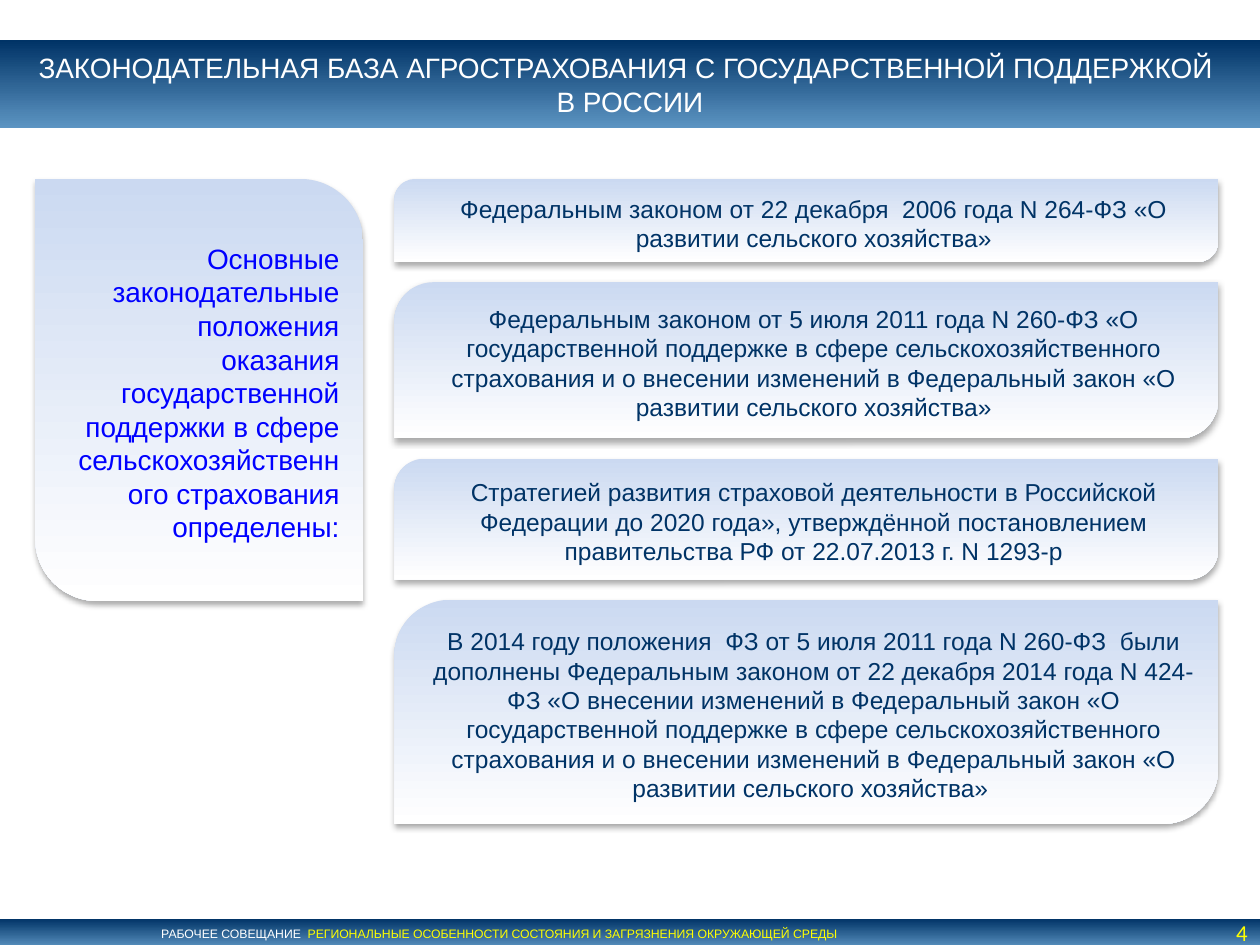
import pptx
import pptx.util
import pptx.dml.color
import pptx.enum.shapes
import pptx.enum.text
import pptx.oxml
import pptx.oxml.ns

Inches = pptx.util.Inches
PP_ALIGN = pptx.enum.text.PP_ALIGN
SHAPES = pptx.enum.shapes.MSO_SHAPE

NAVY, STEEL, PALE = "003366", "5D95C3", "CBD9F1"
WHITE, YELLOW, BLUE = "FFFFFF", "FFFF00", "0000FF"

TITLE = ["ЗАКОНОДАТЕЛЬНАЯ БАЗА АГРОСТРАХОВАНИЯ С ГОСУДАРСТВЕННОЙ ПОДДЕРЖКОЙ ", "В РОССИИ"]
INTRO = ("Основные законодательные положения оказания государственной поддержки "
         "в сфере сельскохозяйственного страхования определены:")
# Height and wording of each law card
LAWS = [
    (0.66, "Федеральным законом от 22 декабря  2006 года N 264-ФЗ «О развитии сельского хозяйства»"),
    (1.24, "Федеральным законом от 5 июля 2011 года N 260-ФЗ «О государственной поддержке в сфере "
           "сельскохозяйственного страхования и о внесении изменений в Федеральный закон "
           "«О развитии сельского хозяйства»"),
    (0.96, "Стратегией развития страховой деятельности в Российской Федерации до 2020 года», "
           "утверждённой постановлением правительства РФ от 22.07.2013 г. N 1293-р"),
    (1.78, "В 2014 году положения  ФЗ от 5 июля 2011 года N 260-ФЗ  были дополнены Федеральным "
           "законом от 22 декабря 2014 года N 424-ФЗ «О внесении изменений в Федеральный закон "
           "«О государственной поддержке в сфере сельскохозяйственного страхования и о внесении "
           "изменений в Федеральный закон «О развитии сельского хозяйства» "),
]


def rgb(value):
    return pptx.dml.color.RGBColor.from_string(value)


def set_gradient(shape, top, bottom):
    shape.fill.gradient()
    shape.fill.gradient_angle = 270
    for stop, color in zip(shape.fill.gradient_stops, (top, bottom)):
        stop.color.rgb = rgb(color)
    shape.line.fill.background()


def set_text(shape, paragraphs, align, size, insets, font="Arial"):
    """Each paragraph is a list of (text, colour) runs."""
    frame = shape.text_frame
    left, top, right, bottom = (Inches(inset) for inset in insets)
    frame_format = {
        "word_wrap": True,
        "auto_size": pptx.enum.text.MSO_AUTO_SIZE.NONE,
        "vertical_anchor": pptx.enum.text.MSO_ANCHOR.MIDDLE,
        "margin_left": left, "margin_top": top,
        "margin_right": right, "margin_bottom": bottom,
    }
    for name, value in frame_format.items():
        setattr(frame, name, value)
    for index, runs in enumerate(paragraphs):
        paragraph = frame.add_paragraph() if index else frame.paragraphs[0]
        paragraph.alignment = align
        for text, color in runs:
            run = paragraph.add_run()
            run.text = text
            for name, value in {"name": font, "size": pptx.util.Pt(size)}.items():
                setattr(run.font, name, value)
            run.font.color.rgb = rgb(color)


def add_soft_shadow(shape):
    shape.shadow.inherit = False
    effects = shape._element.spPr.find(pptx.oxml.ns.qn("a:effectLst"))
    effects.append(pptx.oxml.parse_xml(
        f'<a:outerShdw {pptx.oxml.ns.nsdecls("a")} blurRad="{pptx.util.Pt(3.5)}" '
        f'dist="{pptx.util.Pt(2.2)}" dir="5400000" rotWithShape="0">'
        '<a:srgbClr val="000000"><a:alpha val="32000"/></a:srgbClr></a:outerShdw>'))


def add_title(slide):
    title = slide.shapes.title
    place = {"left": 0, "top": 0.32, "width": 10, "height": 0.7}
    for name, value in place.items():
        setattr(title, name, Inches(value))
    set_gradient(title, NAVY, STEEL)
    set_text(title, [[(line, WHITE)] for line in TITLE], PP_ALIGN.CENTER, 16,
             (0.2, 0.08, 0.2, 0.08))


def add_card(slide, box, corners, text, align, size, color):
    card = slide.shapes.add_shape(SHAPES.ROUND_2_DIAG_RECTANGLE, *map(Inches, box))
    for index, radius in enumerate(corners):
        card.adjustments[index] = radius
    set_gradient(card, PALE, WHITE)
    add_soft_shadow(card)
    set_text(card, [[(text, color)]], align, size, (0.16, 0.08, 0.04, 0.04))


def add_footer(slide):
    footer = slide.shapes.add_shape(SHAPES.RECTANGLE, *map(Inches, (0, 7.29, 10, 0.24)))
    footer.shadow.inherit = False
    set_gradient(footer, NAVY, STEEL)
    meeting = [("РАБОЧЕЕ СОВЕЩАНИЕ  ", WHITE),
               ("РЕГИОНАЛЬНЫЕ ОСОБЕННОСТИ СОСТОЯНИЯ И ЗАГРЯЗНЕНИЯ ОКРУЖАЮЩЕЙ СРЕДЫ", YELLOW)]
    set_text(footer, [meeting], PP_ALIGN.LEFT, 7, (1.28, 0.05, 0.1, 0.05))

    page_number = slide.shapes.add_textbox(*map(Inches, (9.21, 7.29, 0.79, 0.22)))
    set_text(page_number, [[("4", YELLOW)]], PP_ALIGN.RIGHT, 13, (0.1, 0, 0.1, 0), "Calibri")


def main():
    deck = pptx.Presentation()
    deck.slide_width, deck.slide_height = Inches(10), Inches(7.5)
    slide = deck.slides.add_slide(deck.slide_layouts[5])

    add_footer(slide)
    add_title(slide)

    # Introduction on the left
    cards_top, gap = 1.42, 0.16
    add_card(slide, (0.28, cards_top, 2.6, 3.35), (0, 0.19), INTRO, PP_ALIGN.RIGHT, 16, BLUE)

    # Stack of laws on the right
    top = cards_top
    for height, law in LAWS:
        add_card(slide, (3.13, top, 6.54, height), (0.25, 0), law, PP_ALIGN.CENTER, 14, NAVY)
        top += height + gap

    deck.save("out.pptx")


if __name__ == "__main__":
    main()
